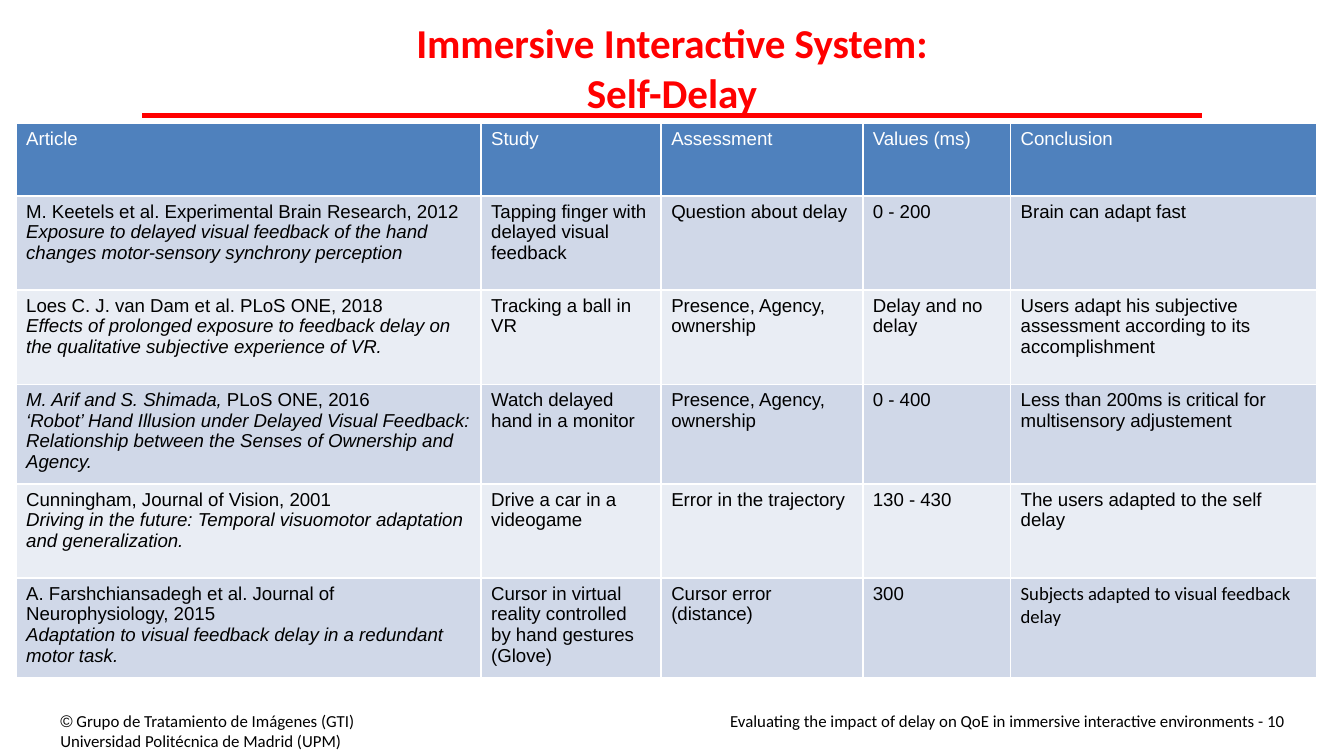
"""Build a slide that tabulates studies of self-delay in immersive systems."""
from pptx import Presentation
from pptx.dml.color import RGBColor
from pptx.enum.shapes import MSO_CONNECTOR
from pptx.enum.text import MSO_ANCHOR, MSO_AUTO_SIZE, PP_ALIGN
from pptx.oxml.ns import qn
from pptx.util import Inches, Pt
from lxml import etree

STRAIGHT = MSO_CONNECTOR.STRAIGHT
MIDDLE, TOP = MSO_ANCHOR.MIDDLE, MSO_ANCHOR.TOP
NO_AUTOFIT = MSO_AUTO_SIZE.NONE
LEFT, CENTER, RIGHT = PP_ALIGN.LEFT, PP_ALIGN.CENTER, PP_ALIGN.RIGHT

RED = RGBColor(0xFF, 0x00, 0x00)
BLACK = RGBColor(0x00, 0x00, 0x00)
WHITE = RGBColor(0xFF, 0xFF, 0xFF)
HEADER_BLUE = RGBColor(0x4F, 0x81, 0xBD)
BANDS = (RGBColor(0xD0, 0xD8, 0xE8), RGBColor(0xE9, 0xED, 0xF4))

SLIDE_WIDTH = 10
SLIDE_HEIGHT = SLIDE_WIDTH * 9 / 16
MARGIN = 1.06
TITLE_TOP, TITLE_HEIGHT = 0.15, 0.7
RULE_TOP = 0.86
TABLE_LEFT, TABLE_TOP = 0.12, 0.92
COLUMN_WIDTHS = (3.46, 1.34, 1.5, 1.1, 2.28)
HEADER_HEIGHT, ROW_HEIGHT = 0.54, 0.7
CELL_SIDE_MARGIN, CELL_EDGE_MARGIN = Pt(5.4), Pt(2.7)

TITLE_LINES = ("Immersive Interactive System:", "Self-Delay")
HEADERS = ("Article", "Study", "Assessment", "Values (ms)", "Conclusion")
STUDIES = (
    ("", "M. Keetels et al. Experimental Brain Research, 2012",
     "Exposure to delayed visual feedback of the hand changes motor-sensory synchrony perception",
     "Tapping finger with delayed visual feedback", "Question about delay",
     "0 - 200", "Brain can adapt fast"),
    ("", "Loes C. J. van Dam et al. PLoS ONE, 2018",
     "Effects of prolonged exposure to feedback delay on the qualitative subjective experience of VR.",
     "Tracking a ball in VR", "Presence, Agency, ownership", "Delay and no delay",
     "Users adapt his subjective assessment according to its accomplishment"),
    ("M. Arif and S. Shimada, ", "PLoS ONE, 2016",
     "‘Robot’ Hand Illusion under Delayed Visual Feedback: "
     "Relationship between the Senses of Ownership and Agency.",
     "Watch delayed hand in a monitor", "Presence, Agency, ownership", "0 - 400",
     "Less than 200ms is critical for multisensory adjustement"),
    ("", "Cunningham, Journal of Vision, 2001",
     "Driving in the future: Temporal visuomotor adaptation and generalization.",
     "Drive a car in a videogame", "Error in the trajectory", "130 - 430",
     "The users adapted to the self delay"),
    ("", "A. Farshchiansadegh et al. Journal of Neurophysiology, 2015",
     "Adaptation to visual feedback delay in a redundant motor task.",
     "Cursor in virtual reality controlled by hand gestures (Glove)",
     "Cursor error (distance)", "300", "Subjects adapted to visual feedback delay"),
)
FOOTERS = (
    ((5.24, 5.24, 4.41, 0.25), RIGHT,
     [[("Evaluating the impact of delay on QoE in immersive interactive environments - 10", {})]]),
    ((0.35, 5.24, 2.52, 0.4), LEFT,
     [[("©", {"name": "Arial"}), (" Grupo de Tratamiento de Imágenes (GTI)", {})],
      [("Universidad Politécnica de Madrid (UPM)", {})]]),
)

TITLE_FONT = {"name": "Calibri", "size": Pt(22), "bold": True}
FOOTER_FONT = {"name": "Calibri", "size": Pt(9)}
TABLE_FONT = {"name": "Arial", "size": Pt(10), "bold": False}
ITALIC = {"italic": True}


def format_font(font, color, values):
    for name, value in values.items():
        setattr(font, name, value)
    font.color.rgb = color


def write(text_frame, paragraphs, base, color, alignment=LEFT):
    for index, runs in enumerate(paragraphs):
        paragraph = text_frame.add_paragraph() if index else text_frame.paragraphs[0]
        paragraph.alignment = alignment
        for text, extra in runs:
            run = paragraph.add_run()
            run.text = text
            format_font(run.font, color, {**base, **extra})


def add_title(slide):
    title = slide.shapes.title
    title.left, title.top = Inches(MARGIN), Inches(TITLE_TOP)
    title.width, title.height = Inches(SLIDE_WIDTH - 2 * MARGIN), Inches(TITLE_HEIGHT)
    frame = title.text_frame
    frame.auto_size, frame.vertical_anchor, frame.word_wrap = NO_AUTOFIT, MIDDLE, True
    paragraph = frame.paragraphs[0]
    paragraph.alignment = CENTER
    for index, line in enumerate(TITLE_LINES):
        if index:
            paragraph.add_line_break()
        run = paragraph.add_run()
        run.text = line
        format_font(run.font, RED, TITLE_FONT)


def add_rule(slide):
    rule = slide.shapes.add_connector(
        STRAIGHT, Inches(MARGIN), Inches(RULE_TOP),
        Inches(SLIDE_WIDTH - MARGIN), Inches(RULE_TOP))
    rule.line.color.rgb = RED
    rule.line.width = Pt(2.25)
    etree.SubElement(rule._element.spPr, qn("a:effectLst"))


def add_footers(slide):
    for box, alignment, paragraphs in FOOTERS:
        frame = slide.shapes.add_textbox(*map(Inches, box)).text_frame
        frame.word_wrap = True
        write(frame, paragraphs, FOOTER_FONT, BLACK, alignment)


def fill_cell(cell, paragraphs, fill, color):
    cell.fill.solid()
    cell.fill.fore_color.rgb = fill
    cell.vertical_anchor = TOP
    cell.margin_left = cell.margin_right = CELL_SIDE_MARGIN
    cell.margin_top = cell.margin_bottom = CELL_EDGE_MARGIN
    write(cell.text_frame, paragraphs, TABLE_FONT, color)


def add_studies(slide):
    height = HEADER_HEIGHT + ROW_HEIGHT * len(STUDIES)
    table = slide.shapes.add_table(
        len(STUDIES) + 1, len(HEADERS), Inches(TABLE_LEFT), Inches(TABLE_TOP),
        Inches(sum(COLUMN_WIDTHS)), Inches(height)).table
    for column, width in zip(table.columns, COLUMN_WIDTHS):
        column.width = Inches(width)
    for index, row in enumerate(table.rows):
        row.height = Inches(ROW_HEIGHT if index else HEADER_HEIGHT)
    for column, header in enumerate(HEADERS):
        fill_cell(table.cell(0, column), [[(header, {})]], HEADER_BLUE, WHITE)
    for row, (authors, source, article, *details) in enumerate(STUDIES, 1):
        citation = [(authors, ITALIC)] if authors else []
        cells = [[citation + [(source, {})], [(article, ITALIC)]]]
        cells += [[[(detail, {})]] for detail in details]
        if row == len(STUDIES):
            cells[-1] = [[(details[-1], {"name": "Calibri"})]]
        for column, paragraphs in enumerate(cells):
            fill_cell(table.cell(row, column), paragraphs, BANDS[(row - 1) % 2], BLACK)


def main():
    presentation = Presentation()
    presentation.slide_width = Inches(SLIDE_WIDTH)
    presentation.slide_height = Inches(SLIDE_HEIGHT)
    slide = presentation.slides.add_slide(presentation.slide_layouts[5])
    add_rule(slide)
    add_footers(slide)
    add_title(slide)
    add_studies(slide)
    presentation.save("out.pptx")


if __name__ == "__main__":
    main()
